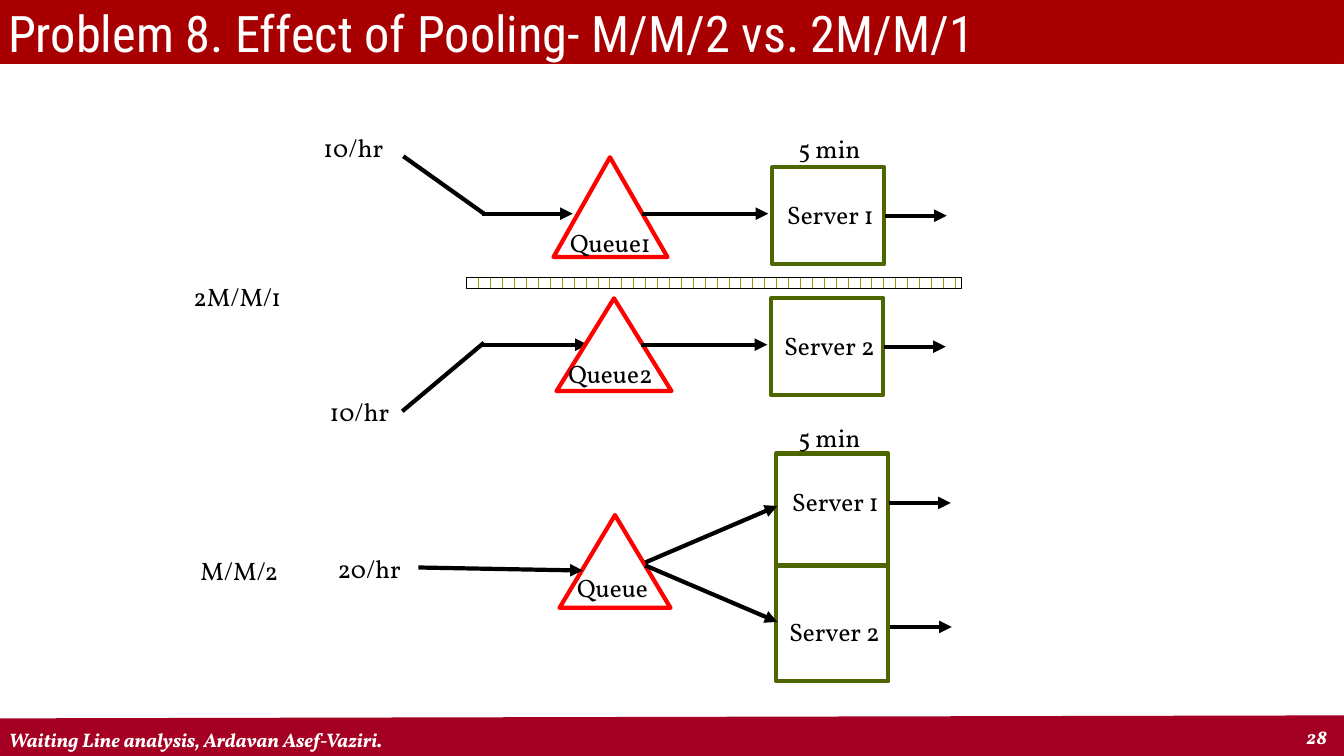
from lxml import etree
from pptx import Presentation, util as u
from pptx.dml.color import RGBColor
from pptx.enum import dml, shapes, text
from pptx.oxml.ns import qn

PX = 9144  # EMU per px, 100 px to the inch
HEX = {"bar": "A80000", "foot": "A50023", "queue": "FF0000", "server": "4D6600",
       "brick": "999900", "ink": "000000", "white": "FFFFFF"}
BODY, HEAD = "Vollkorn", "Roboto Condensed"
MID, LOW = text.MSO_ANCHOR.MIDDLE, text.MSO_ANCHOR.BOTTOM


def rgb(name):
    return RGBColor.from_string(HEX[name])


def emu(*nums):
    return [u.Emu(n * PX) for n in nums]


def write(shape, words, size=18, font=BODY, color="ink", bold=False,
          center=False, wrap=False, anchor=text.MSO_ANCHOR.TOP):
    frame = shape.text_frame
    frame.word_wrap = wrap
    frame.auto_size = text.MSO_AUTO_SIZE.NONE
    frame.vertical_anchor = anchor
    para = frame.paragraphs[0]
    para.alignment = text.PP_ALIGN.CENTER if center else text.PP_ALIGN.LEFT
    run = para.add_run()
    run.text = words
    run.font.size, run.font.name = u.Pt(size), font
    run.font.bold = run.font.italic = bold
    run.font.color.rgb = rgb(color)


def label(slide, box, words, **style):
    write(slide.shapes.add_textbox(*emu(*box)), words, **style)


def outline(shape, color, width=3):
    shape.shadow.inherit = False
    shape.line.color.rgb = rgb(color)
    shape.line.width = u.Pt(width)


def block(slide, box, color, width=3):
    shape = slide.shapes.add_shape(shapes.MSO_SHAPE.RECTANGLE, *emu(*box))
    shape.fill.background()
    outline(shape, color, width)
    return shape


def line(slide, start, end, color="ink", width=3, arrow=False):
    link = slide.shapes.add_connector(
        shapes.MSO_CONNECTOR.STRAIGHT, *emu(*start, *end))
    link.line.color.rgb = rgb(color)
    link.line.width = u.Pt(width)
    if arrow:
        etree.SubElement(link.line._get_or_add_ln(), qn("a:tailEnd"), type="triangle")
    etree.SubElement(link._element.spPr, qn("a:effectLst"))


def arrow(slide, start, end):
    line(slide, start, end, arrow=True)


def queue(slide, box, words, tag):
    """Triangle filling the box, with its name in the tag box."""
    x, y, w, h = box
    path = slide.shapes.build_freeform(x, y + h, scale=PX)
    path.add_line_segments([(x + w // 2, y), (x + w, y + h)], close=True)
    shape = path.convert_to_shape()
    shape.fill.background()
    outline(shape, "queue")
    label(slide, tag, words, center=True)


def lane(slide, x, y, num, wait, feed, entry):
    """One queue and its own server; x, y is the server's corner."""
    bend, mid = (480, feed[1]), y + 46
    line(slide, bend, feed[0])
    arrow(slide, (478, mid), (entry, mid))
    queue(slide, wait, f"Queue{num}", (552, y + 55, 107, 40))
    arrow(slide, (x - 129, mid), (x - 4, mid))
    block(slide, (x, y, 111, 96), "server")
    label(slide, (x + 2, y + 27, 111, 40), f"Server {num}", center=True)
    arrow(slide, (x + 112, y + 48), (x + 173, y + 48))


def split(slide):
    """Two separate lanes, 2M/M/1."""
    lane(slide, 766, 166, 1, (549, 156, 113, 99), ((400, 155), 212), 568)
    lane(slide, 765, 296, 2, (552, 296, 114, 92), ((399, 408), 340), 583)
    wall = block(slide, (463, 275, 491, 11), "ink", 0.75)
    wall.fill.patterned()
    wall.fill.pattern = dml.MSO_PATTERN.HORIZONTAL_BRICK
    wall.fill.fore_color.rgb = rgb("brick")
    wall.fill.back_color.rgb = rgb("white")
    label(slide, (182, 274, 146, 40), "2M/M/1", wrap=True)
    label(slide, (311, 126, 85, 40), "10/hr")
    label(slide, (317, 388, 85, 40), "10/hr")
    label(slide, (782, 127, 83, 40), "5 min")


def pool(slide, x, y, w, h):
    """One queue for two servers, M/M/2; the box holds the servers."""
    mid = y + 111
    block(slide, (x, y, w, h), "server")
    line(slide, (x, mid), (x + w, mid), "server")
    queue(slide, (555, 511, 110, 92), "Queue", (560, 563, 95, 40))
    ways = [(1, 3, 28, 108, 52, 49), (2, 2, 157, 111, 167, 172)]
    for num, dx, tag, start, end, out in ways:
        label(slide, (x + dx, y + tag, 111, 40), f"Server {num}", center=True)
        arrow(slide, (640, y + start), (x + 1, y + end))
        arrow(slide, (x + w + num, y + out), (x + w + num + 61, y + out))
    arrow(slide, (415, 563), (578, 566))
    label(slide, (189, 546, 146, 40), "M/M/2", wrap=True)
    label(slide, (325, 544, 85, 40), "20/hr")
    label(slide, (782, 414, 83, 40), "5 min")


def header(slide, x, y, w, h):
    bar = block(slide, (x, y, w, h), "bar", 0.75)
    bar.fill.solid()
    bar.fill.fore_color.rgb = rgb("bar")
    title = slide.shapes.title
    title.left, title.top, title.width, title.height = emu(x - 2, y + 1, w + 21, h + 1)
    write(title, "Problem 8. Effect of Pooling- M/M/2 vs. 2M/M/1", size=36,
          font=HEAD, color="white", wrap=True, anchor=MID)
    bar.element.addnext(title.element)


def footer(slide, x, y, w, h):
    style = dict(size=14, color="white", bold=True, wrap=True, anchor=LOW)
    line(slide, (x, y + 17), (x + w, y + 14), "foot", 29.25)
    label(slide, (x, y, 1085, h), "Waiting Line analysis, Ardavan Asef-Vaziri.", **style)
    label(slide, (1286, y - 3, 47, h), "28", **style)


def main():
    deck = Presentation()
    deck.slide_width, deck.slide_height = emu(1333, 750)
    slide = deck.slides.add_slide(deck.slide_layouts[5])
    footer(slide, -1, 716, 1337, 34)
    header(slide, 0, -1, 1333, 64)
    split(slide)
    pool(slide, 770, 450, 111, 226)
    deck.save("out.pptx")


if __name__ == "__main__":
    main()
